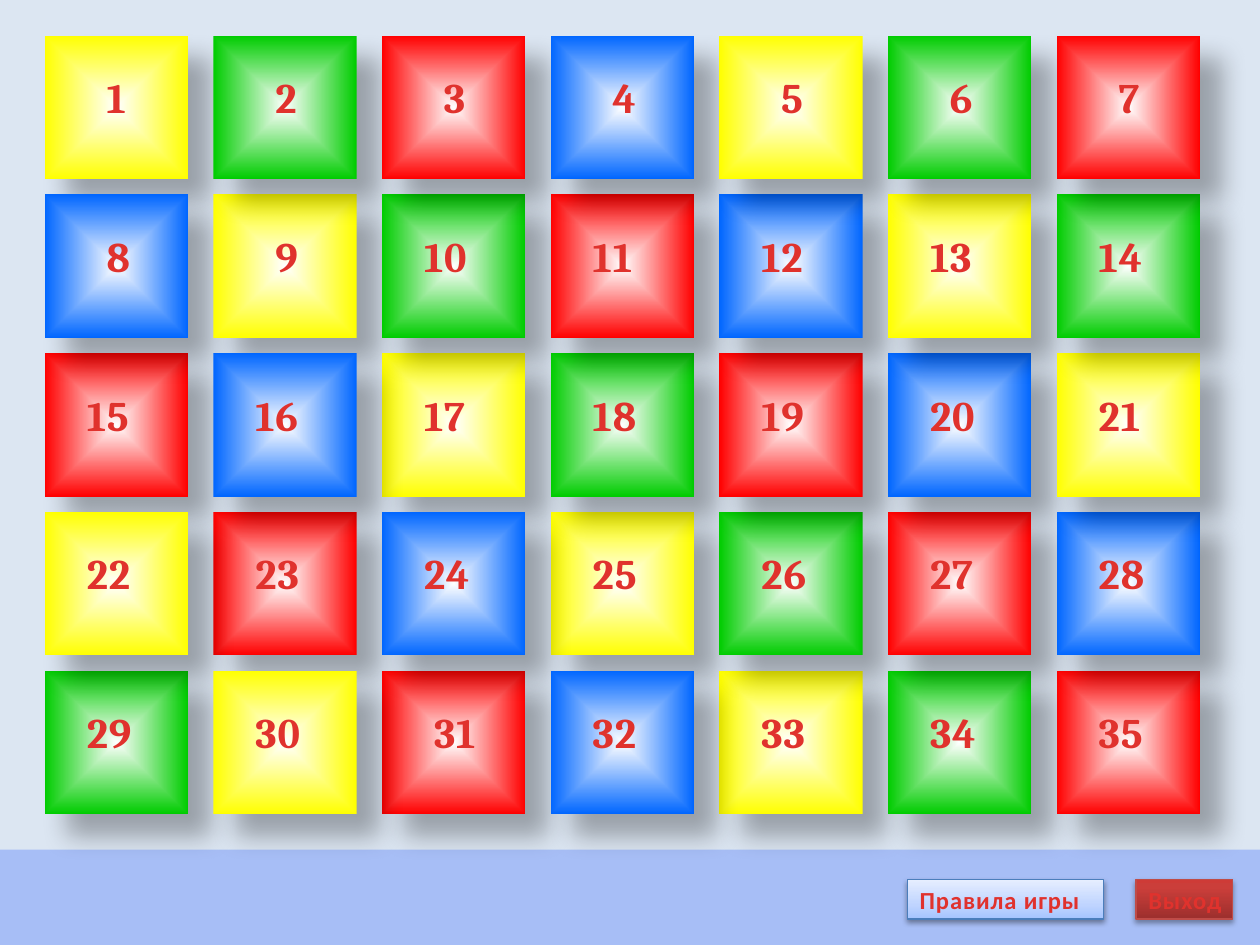
from dataclasses import dataclass

from lxml import etree
from pptx import Presentation
from pptx.dml.color import RGBColor
from pptx.enum.shapes import MSO_SHAPE
from pptx.enum.text import MSO_ANCHOR, PP_ALIGN
from pptx.oxml.ns import qn
from pptx.util import Cm, Pt

TILE = MSO_SHAPE.ACTION_BUTTON_CUSTOM
RECTANGLE = MSO_SHAPE.RECTANGLE
TOP, MIDDLE = MSO_ANCHOR.TOP, MSO_ANCHOR.MIDDLE
LEFT = PP_ALIGN.LEFT


@dataclass(frozen=True)
class Theme:
    background: str = "DCE6F2"
    footer: str = "3366FF"
    footer_opacity: int = 31
    yellow: str = "FFFF00"
    red: str = "FF0000"
    blue: str = "0066FF"
    green: str = "00CC00"
    tile_centre: str = "FFFFFF"
    shadow: str = "000000"
    text: tuple = ((25, "E0322D"), (100, "A2201C"))
    rules_fill: tuple = ((0, "A4C4FF"), (35, "BFD4FF"), (100, "E6EEFF"))
    rules_line: str = "4B7EBC"
    exit_fill: tuple = ((0, "9C2F2D"), (80, "CB3E3A"), (100, "CE3B37"))
    exit_line: str = "BF4C48"
    number_font: str = "Cambria"
    number_size: int = 24
    button_font: str = "Calibri"
    button_size: int = 14


def add_node(parent, tag, **attributes):
    values = {name: str(value) for name, value in attributes.items()}
    return etree.SubElement(parent, qn(tag), values)


def paint_gradient(fill, owner, stops, angle=None):
    """Fill with colour stops; without an angle they spread from the centre."""
    fill.gradient()
    gradient = owner.find(qn("a:gradFill"))
    for child in list(gradient):
        gradient.remove(child)
    stop_list = add_node(gradient, "a:gsLst")
    for position, colour in stops:
        stop = add_node(stop_list, "a:gs", pos=position * 1000)
        add_node(stop, "a:srgbClr", val=colour)
    if angle is None:
        spread = add_node(gradient, "a:path", path="rect")
        add_node(spread, "a:fillToRect", l=50000, t=50000, r=50000, b=50000)
    else:
        add_node(gradient, "a:lin", ang=angle * 60000, scaled=0)


class GameBoard:
    ORIGIN_X, ORIGIN_Y = 0.9, 0.72
    STEP_X, STEP_Y = 3.4, 3.2
    TILE_SIZE = 2.89

    def __init__(self, slide, theme):
        self.slide = slide
        self.theme = theme
        background = slide.background.fill
        background.solid()
        background.fore_color.rgb = RGBColor.from_string(theme.background)

    def corner(self, column, row):
        return (self.ORIGIN_X + column * self.STEP_X,
                self.ORIGIN_Y + row * self.STEP_Y)

    def shape(self, kind, box):
        shape = self.slide.shapes.add_shape(kind, *map(Cm, box))
        shape.shadow.inherit = False
        shape.line.fill.background()
        return shape

    def cast_shadow(self, shape, opacity, blur, distance, direction):
        effects = shape._element.spPr.find(qn("a:effectLst"))
        shadow = add_node(effects, "a:outerShdw", blurRad=Pt(blur),
                          dist=Pt(distance), dir=direction * 60000,
                          algn="tl", rotWithShape=0)
        colour = add_node(shadow, "a:srgbClr", val=self.theme.shadow)
        add_node(colour, "a:alpha", val=opacity * 1000)

    def put_text(self, shape, text, font_name, size, anchor):
        frame = shape.text_frame
        frame.word_wrap = False
        frame.vertical_anchor = anchor
        paragraph = frame.paragraphs[0]
        paragraph.alignment = LEFT
        run = paragraph.add_run()
        run.text = text
        font_format = {"name": font_name, "size": Pt(size), "bold": True}
        for attribute, value in font_format.items():
            setattr(run.font, attribute, value)
        properties = run._r.get_or_add_rPr()
        properties.set("spc", "50")
        paint_gradient(run.font.fill, properties, self.theme.text, 90)

    def tile(self, column, row, colour):
        size = self.TILE_SIZE
        tile = self.shape(TILE, (*self.corner(column, row), size, size))
        stops = ((0, self.theme.tile_centre), (100, colour))
        paint_gradient(tile.fill, tile._element.spPr, stops)
        self.cast_shadow(tile, 30, 15, 18, 45)

    def number(self, value, columns, nudge=0):
        row, column = divmod(value - 1, columns)
        left, top = self.corner(column, row)
        width = 0.8 * len(str(value))
        box = (left + 1.4 - width / 2 + nudge, top + 0.6, width, 1.6)
        label = self.slide.shapes.add_textbox(*map(Cm, box))
        self.put_text(label, str(value), self.theme.number_font,
                      self.theme.number_size, TOP)

    def footer(self, box):
        band = self.shape(RECTANGLE, box)
        band.fill.solid()
        band.fill.fore_color.rgb = RGBColor.from_string(self.theme.footer)
        colour = band._element.spPr.find(qn("a:solidFill"))[0]
        add_node(colour, "a:alpha", val=self.theme.footer_opacity * 1000)

    def button(self, text, box, stops, line_colour, shadow):
        button = self.shape(RECTANGLE, box)
        paint_gradient(button.fill, button._element.spPr, stops, 270)
        button.line.color.rgb = RGBColor.from_string(line_colour)
        button.line.width = Pt(0.75)
        self.cast_shadow(button, *shadow)
        self.put_text(button, text, self.theme.button_font,
                      self.theme.button_size, MIDDLE)


def main():
    presentation = Presentation()
    presentation.slide_width, presentation.slide_height = Cm(25.4), Cm(19.05)
    slide = presentation.slides.add_slide(presentation.slide_layouts[6])
    theme = Theme()
    board = GameBoard(slide, theme)
    columns, rows = 7, 5

    # Diagonals of one colour: first column, first row, length, colour.
    # Their order decides which tile a shadow falls on.
    diagonals = (
        (0, 0, 1, theme.yellow), (0, 2, 1, theme.red), (0, 1, 1, theme.blue),
        (1, 3, 2, theme.red), (1, 1, 4, theme.yellow), (1, 2, 3, theme.blue),
        (1, 0, 5, theme.green), (2, 0, 5, theme.red), (3, 0, 4, theme.blue),
        (4, 0, 3, theme.yellow), (5, 0, 2, theme.green),
        (0, 4, 1, theme.green), (6, 0, 1, theme.red), (0, 3, 2, theme.yellow),
    )
    for column, row, length, colour in diagonals:
        for step in range(length):
            board.tile(column + step, row + step, colour)

    nudges = {31: 0.2}
    for value in range(1, columns * rows + 1):
        board.number(value, columns, nudges.get(value, 0))

    board.footer((0, 17.13, 25.4, 1.92))
    board.button("Правила игры", (18.29, 17.73, 3.95, 0.8),
                 theme.rules_fill, theme.rules_line, (38, 3.1, 1.6, 90))
    board.button("Выход", (22.9, 17.73, 1.95, 0.8),
                 theme.exit_fill, theme.exit_line, (35, 3.1, 1.8, 90))
    presentation.save("out.pptx")


if __name__ == "__main__":
    main()
